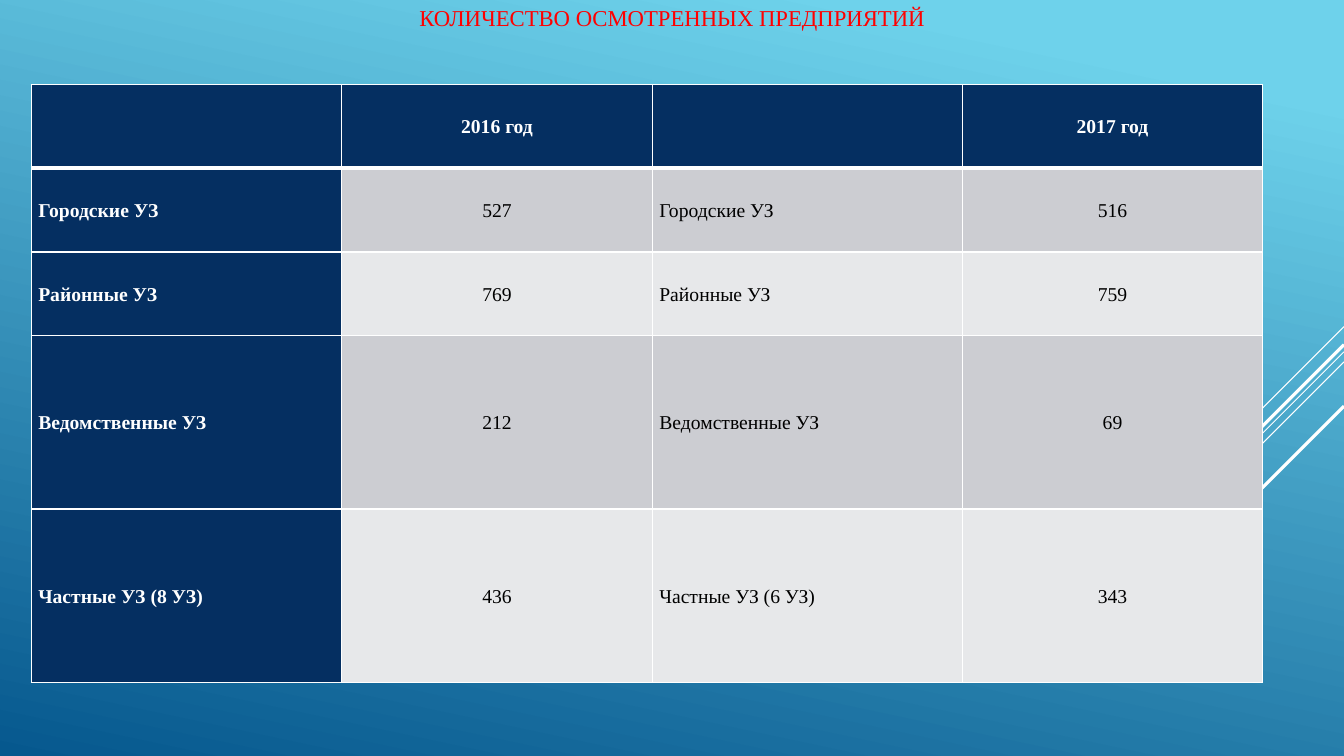
from lxml import etree
from pptx import Presentation
from pptx.dml.color import RGBColor
from pptx.enum.shapes import MSO_CONNECTOR
from pptx.enum.text import MSO_ANCHOR, PP_ALIGN
from pptx.oxml.ns import qn
from pptx.util import Inches, Pt

STRAIGHT = MSO_CONNECTOR.STRAIGHT
MIDDLE = MSO_ANCHOR.MIDDLE
CENTER = PP_ALIGN.CENTER
LEFT = PP_ALIGN.LEFT

FONT = "Times New Roman"
WHITE = "FFFFFF"
BLACK = "000000"
RED = "FF0000"
NAVY = "052F61"
BANDS = ("E7E8EA", "CCCDD2")
GRADIENT = ((0.1, "6ED2EB"), (1, "06588E"))

SLIDE_WIDTH = 13.33
STRIPES = (
    (3.24, 1, 0.75),
    (3.49, 3.26, 0.75),
    (3.59, 2.07, 0.75),
    (3.42, 1.91, 2.25),
    (4.03, 1.39, 2.25),
)
COLUMN_WIDTHS = (3.08, 3.08, 3.08, 2.97)
ROW_HEIGHTS = (0.83, 0.83, 0.83, 1.72, 1.72)
ROWS = (
    ("", "2016 год", "", "2017 год"),
    ("Городские УЗ", "527", "Городские УЗ", "516"),
    ("Районные УЗ", "769", "Районные УЗ", "759"),
    ("Ведомственные УЗ", "212", "Ведомственные УЗ", "69"),
    ("Частные УЗ (8 УЗ)", "436", "Частные УЗ (6 УЗ)", "343"),
)


def color(value):
    return RGBColor.from_string(value)


def set_background(slide):
    fill = slide.background.fill
    fill.gradient()
    fill.gradient_angle = 258
    for stop, (position, value) in zip(fill.gradient_stops, GRADIENT):
        stop.position = position
        stop.color.rgb = color(value)


def add_stripe(slide, top, length, width):
    connector = slide.shapes.add_connector(
        STRAIGHT, Inches(SLIDE_WIDTH), Inches(top),
        Inches(SLIDE_WIDTH - length), Inches(top + length))
    connector.line.color.rgb = color(WHITE)
    connector.line.width = Pt(width)
    etree.SubElement(connector._element.spPr, qn("a:effectLst"))


def style_paragraph(paragraph, size, value, alignment, bold=False):
    paragraph.alignment = alignment
    paragraph.font.name = FONT
    paragraph.font.size = Pt(size)
    paragraph.font.bold = bold
    paragraph.font.color.rgb = color(value)


def add_title(slide, text):
    box = slide.shapes.add_textbox(0, 0, Inches(SLIDE_WIDTH), Inches(0.35))
    frame = box.text_frame
    frame.word_wrap = True
    frame.vertical_anchor = MIDDLE
    frame.text = text
    style_paragraph(frame.paragraphs[0], 16.2, RED, CENTER)


def set_borders(cell, widths):
    properties = cell._tc.get_or_add_tcPr()
    for index, (side, width) in enumerate(widths.items()):
        line = etree.Element(qn(f"a:ln{side}"), w=str(Pt(width)))
        fill = etree.SubElement(line, qn("a:solidFill"))
        etree.SubElement(fill, qn("a:srgbClr"), val=WHITE)
        properties.insert(index, line)


def fill_cell(cell, text, row, column):
    heading = row == 0 or column == 0
    cell.fill.solid()
    cell.fill.fore_color.rgb = color(NAVY if heading else BANDS[row % 2])
    cell.vertical_anchor = MIDDLE
    cell.margin_left = cell.margin_right = Inches(0.07)
    cell.margin_top = cell.margin_bottom = 0
    set_borders(cell, {"L": 1, "R": 1, "T": 3 if row == 1 else 1, "B": 3 if row == 0 else 1})
    cell.text = text
    paragraph = cell.text_frame.paragraphs[0]
    paragraph.line_spacing = 1.07
    style_paragraph(paragraph, 14, WHITE if heading else BLACK,
                    CENTER if column % 2 else LEFT, heading)


def add_inspection_table(slide):
    table = slide.shapes.add_table(
        len(ROWS), len(COLUMN_WIDTHS), Inches(0.31), Inches(0.84),
        Inches(sum(COLUMN_WIDTHS)), Inches(sum(ROW_HEIGHTS))).table
    for column, width in zip(table.columns, COLUMN_WIDTHS):
        column.width = Inches(width)
    for row, height in zip(table.rows, ROW_HEIGHTS):
        row.height = Inches(height)
    for row, texts in enumerate(ROWS):
        for column, text in enumerate(texts):
            fill_cell(table.cell(row, column), text, row, column)


def main():
    presentation = Presentation()
    presentation.slide_width = Inches(SLIDE_WIDTH)
    presentation.slide_height = Inches(7.5)
    slide = presentation.slides.add_slide(presentation.slide_layouts[6])
    set_background(slide)
    for stripe in STRIPES:
        add_stripe(slide, *stripe)
    add_title(slide, "КОЛИЧЕСТВО ОСМОТРЕННЫХ ПРЕДПРИЯТИЙ")
    add_inspection_table(slide)
    presentation.save("out.pptx")


if __name__ == "__main__":
    main()
